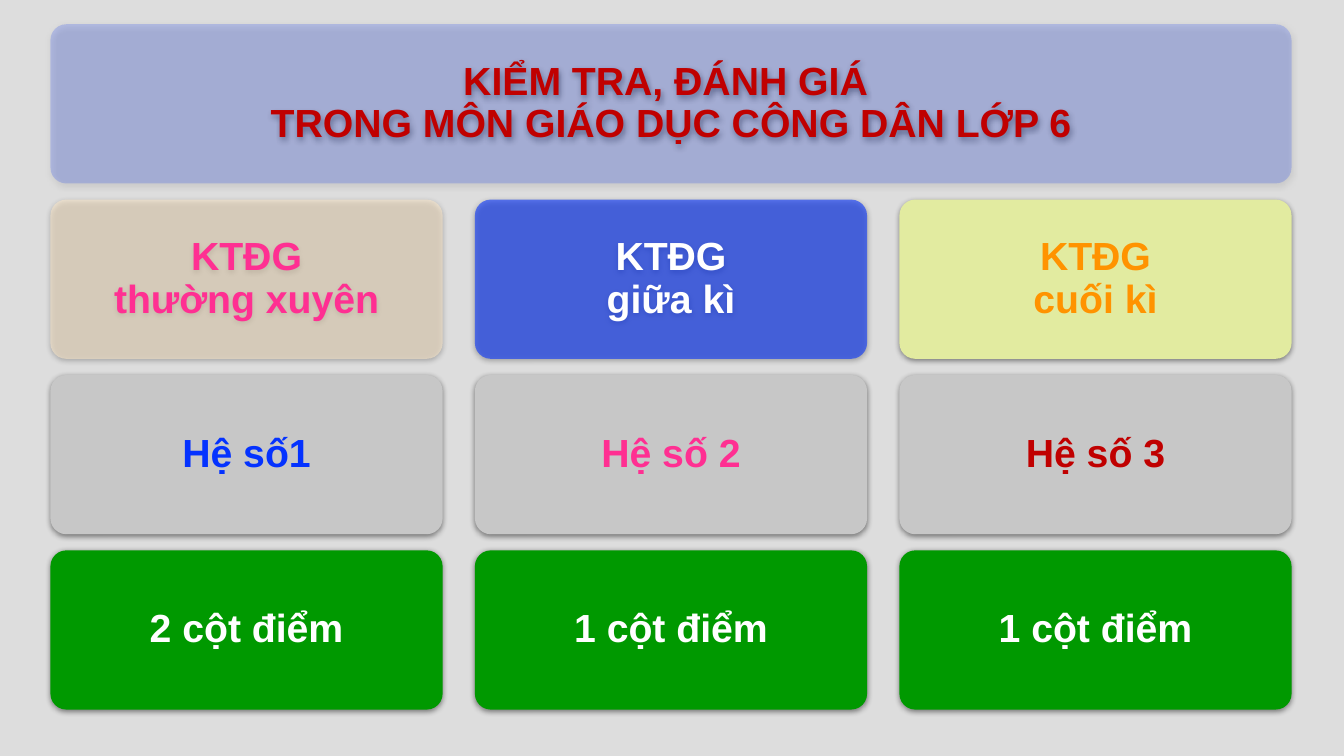
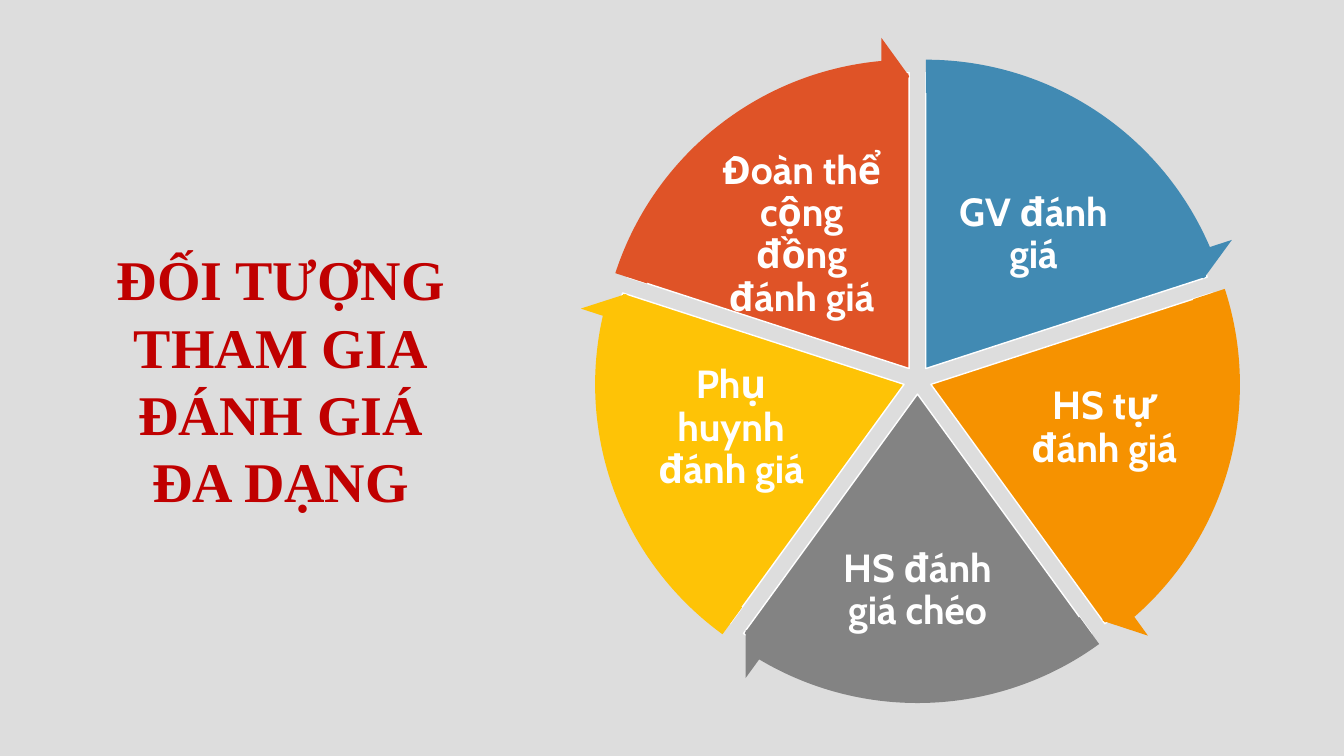
"""Build two slides on assessment in Grade 6 civic education."""
from math import cos, radians, sin

from lxml import etree
from pptx import Presentation
from pptx.dml.color import RGBColor
from pptx.enum.shapes import MSO_SHAPE
from pptx.enum.text import MSO_ANCHOR, PP_ALIGN
from pptx.oxml.ns import qn
from pptx.util import Inches, Pt

CARD, SECTOR, ARROW = MSO_SHAPE.ROUNDED_RECTANGLE, MSO_SHAPE.PIE, MSO_SHAPE.CIRCULAR_ARROW
MIDDLE, TOP, CENTER = MSO_ANCHOR.MIDDLE, MSO_ANCHOR.TOP, PP_ALIGN.CENTER

BACKDROP, WHITE, RED, PINK, BLUE = "DDDDDD", "FFFFFF", "C00000", "FF2F92", "0432FF"
GREY, GREEN = "C7C7C7", "009900"


def paint(fill, color):
    fill.solid()
    fill.fore_color.rgb = RGBColor.from_string(color)


def write(shape, text, font="Arial", size=28, color=WHITE, anchor=MIDDLE,
          spacing=0.9, margins=(0.12, 0.12)):
    frame = shape.text_frame
    frame.word_wrap = True
    frame.vertical_anchor = anchor
    frame.margin_left = frame.margin_right = Inches(margins[0])
    frame.margin_top = frame.margin_bottom = Inches(margins[1])
    frame.text = text
    for paragraph in frame.paragraphs:
        paragraph.alignment = CENTER
        paragraph.line_spacing = spacing
        for run in paragraph.runs:
            run.font.name, run.font.size, run.font.bold = font, Pt(size), True
            paint(run.font.fill, color)


prs = Presentation()
prs.slide_width, prs.slide_height = Inches(13.33), Inches(7.5)
paint(prs.slide_master.background.fill, BACKDROP)
blank = prs.slide_layouts[6]

grading = prs.slides.add_slide(blank)
GRID_LEFT, GRID_TOP = 0.5, 0.24
COLUMN_STEP, ROW_STEP = 4.21, 1.74
CARD_WIDTH, CARD_HEIGHT = 3.89, 1.58
CARDS = [
    (0, 0, 3, "KIỂM TRA, ĐÁNH GIÁ \vTRONG MÔN GIÁO DỤC CÔNG DÂN LỚP 6", RED, BLUE, 19),
    (1, 0, 1, "KTĐG\vthường xuyên", PINK, "FFEACA", 53),
    (2, 0, 1, "Hệ số1", BLUE, GREY, 100),
    (3, 0, 1, "2 cột điểm", WHITE, GREEN, 100),
    (1, 1, 1, "KTĐG\vgiữa kì", WHITE, BLUE, 59),
    (2, 1, 1, "Hệ số 2", PINK, GREY, 100),
    (3, 1, 1, "1 cột điểm", WHITE, GREEN, 100),
    (1, 2, 1, "KTĐG\vcuối kì", "FF9300", "E2EBA0", 100),
    (2, 2, 1, "Hệ số 3", RED, GREY, 100),
    (3, 2, 1, "1 cột điểm", WHITE, GREEN, 100),
]
for row, column, span, text, text_color, card_color, opacity in CARDS:
    card = grading.shapes.add_shape(
        CARD, Inches(GRID_LEFT + column * COLUMN_STEP), Inches(GRID_TOP + row * ROW_STEP),
        Inches(CARD_WIDTH + (span - 1) * COLUMN_STEP), Inches(CARD_HEIGHT))
    card.adjustments[0] = 0.1
    card.line.fill.background()
    paint(card.fill, card_color)
    write(card, text, color=text_color)
    properties = card._element.spPr
    if opacity < 100:
        tint = properties.find(qn("a:solidFill")).find(qn("a:srgbClr"))
        etree.SubElement(tint, qn("a:alpha"), val=str(opacity * 1000))
    card.shadow.inherit = False
    shadow = etree.SubElement(
        properties.find(qn("a:effectLst")), qn("a:outerShdw"), blurRad=str(Pt(4.4)),
        dist=str(Pt(1.2)), dir="5400000", algn="ctr", rotWithShape="0")
    shade = etree.SubElement(shadow, qn("a:srgbClr"), val="000000")
    etree.SubElement(shade, qn("a:alpha"), val="45000")

assessors = prs.slides.add_slide(blank)
HUB_X, HUB_Y, SPREAD = 9.1, 3.77, 0.14
SECTOR_SIZE, ARROW_SIZE = 5.87, 6.59
SWEEP, START, ANGLE_UNIT = 72, 270, 0.6
ASSESSORS = [
    ("GV đánh giá", "418AB3", 1.15, -1.44, 1.89, 1.26),
    ("HS tự đánh giá", "F69200", 1.85, 0.48, 1.75, 1.4),
    ("HS đánh giá chéo", "838383", 0, 2.09, 1.68, 1.54),
    ("Phụ huynh đánh giá", "FEC306", -1.85, 0.48, 1.75, 1.4),
    ("Đoàn thể cộng đồng đánh giá", "DF5327", -1.15, -1.44, 1.89, 1.26),
]
for kind, size in ((SECTOR, SECTOR_SIZE), (ARROW, ARROW_SIZE)):
    for index, (text, color, across, down, width, height) in enumerate(ASSESSORS):
        start = START + index * SWEEP
        outward = radians(start + SWEEP / 2)
        piece = assessors.shapes.add_shape(
            kind, Inches(HUB_X + SPREAD * cos(outward) - size / 2),
            Inches(HUB_Y + SPREAD * sin(outward) - size / 2), Inches(size), Inches(size))
        piece.shadow.inherit = False
        paint(piece.fill, color)
        begin, end = start % 360 * ANGLE_UNIT, (start + SWEEP) % 360 * ANGLE_UNIT
        if kind == SECTOR:
            angles = begin, end
            paint(piece.line.fill, WHITE)
            piece.line.width = Pt(1)
            label = assessors.shapes.add_textbox(
                Inches(HUB_X + across - width / 2), Inches(HUB_Y + down - height / 2),
                Inches(width), Inches(height))
            write(label, text, font="Cabin", margins=(0.04, 0.04))
        else:
            angles = 0.05, 3.28, end - 3.28, begin, 0.06
            piece.line.fill.background()
        for position, angle in enumerate(angles):
            piece.adjustments[position] = angle

heading = assessors.shapes.add_textbox(Inches(0.5), Inches(2.38), Inches(4.57), Inches(2.79))
write(heading, "ĐỐI TƯỢNG\vTHAM GIA\nĐÁNH GIÁ\nĐA DẠNG", font="Times New Roman", size=40,
      color=RED, anchor=TOP, spacing=1.0, margins=(0.1, 0.05))

prs.save("out.pptx")
